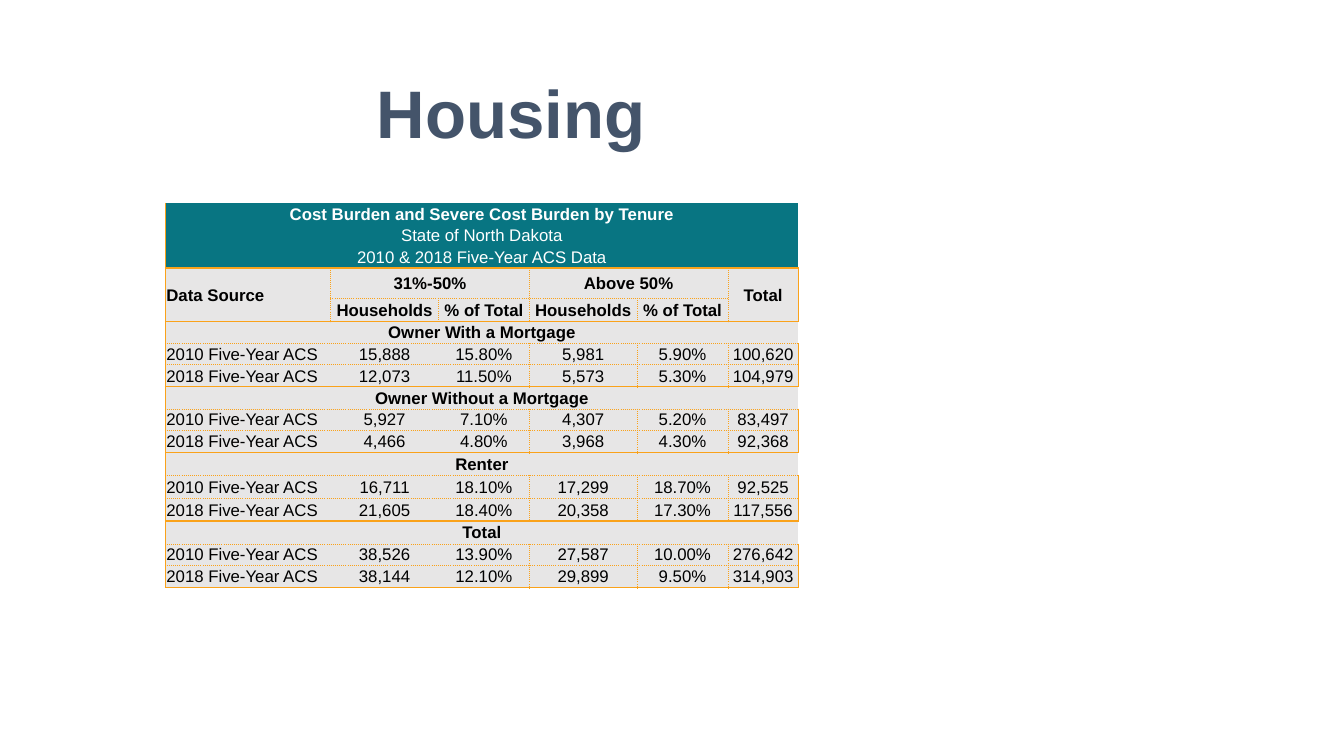
from lxml import etree
from pptx import Presentation, util as u
from pptx.dml.color import RGBColor
from pptx.enum import text
from pptx.oxml import ns

PX = 9144
TEAL, GREY, ORANGE = "087582", "E7E6E6", "FAA21A"
WHITE, BLACK, SLATE = "FFFFFF", "000000", "44546A"
NO_STYLE = "{2D5ABB26-0587-4C30-8999-92F81FD0307C}"
DOTTED, THIN, THICK = 0.5, 1, 2

COLUMN_WIDTHS = [164, 107, 90, 107, 90, 70]
ROW_HEIGHTS = [22, 21, 22, 30, 23, 22, 21, 22, 22, 21, 22, 23, 23, 22, 23, 21, 22]
CAPTIONS = [
    ["Cost Burden and Severe Cost Burden by Tenure"],
    ["State of North Dakota"],
    ["2010 & 2018 Five-Year ACS Data"],
]
HEADINGS = [
    ["Data Source", "31%-50%", "", "Above 50%", "", "Total"],
    ["", "Households", "% of Total", "Households", "% of Total", ""],
]
TENURES = {
    "Owner With a Mortgage": [
        ["15,888", "15.80%", "5,981", "5.90%", "100,620"],
        ["12,073", "11.50%", "5,573", "5.30%", "104,979"],
    ],
    "Owner Without a Mortgage": [
        ["5,927", "7.10%", "4,307", "5.20%", "83,497"],
        ["4,466", "4.80%", "3,968", "4.30%", "92,368"],
    ],
    "Renter": [
        ["16,711", "18.10%", "17,299", "18.70%", "92,525"],
        ["21,605", "18.40%", "20,358", "17.30%", "117,556"],
    ],
    "Total": [
        ["38,526", "13.90%", "27,587", "10.00%", "276,642"],
        ["38,144", "12.10%", "29,899", "9.50%", "314,903"],
    ],
}
SECTION_ROWS = [5, 8, 11, 14]
HEADING_MERGES = [(3, 0, 4, 0), (3, 1, 3, 2), (3, 3, 3, 4), (3, 5, 4, 5)]


def color(value):
    """Return the colour for a hex string."""
    return RGBColor.from_string(value)


def set_font(paragraph, size, value, bold):
    """Set the font of a whole paragraph."""
    font = paragraph.font
    font.name, font.size, font.bold = "Arial", u.Pt(size), bold
    font.color.rgb = color(value)


def is_full_width(row):
    """Tell whether a row is one merged cell."""
    return row < len(CAPTIONS) or row in SECTION_ROWS


def vertical_rule(row, edge):
    """Return the line width at a column edge of a row."""
    if edge in (0, len(COLUMN_WIDTHS)):
        return THIN
    if is_full_width(row):
        return None
    return DOTTED if edge in (3, 5) or (edge == 1 and row in (3, 4)) else None


def horizontal_rule(edge, column):
    """Return the line width at a row edge of a column."""
    if edge == SECTION_ROWS[-1]:
        return THICK
    if edge in (len(CAPTIONS), len(ROW_HEIGHTS), *SECTION_ROWS):
        return THIN
    below_section = edge - 1 in SECTION_ROWS
    return DOTTED if below_section or (edge == 4 and 1 <= column <= 4) else None


def add_borders(cell, row, column):
    """Draw the four borders of a cell."""
    widths = {
        "a:lnL": vertical_rule(row, column),
        "a:lnR": vertical_rule(row, column + 1),
        "a:lnT": horizontal_rule(row, column),
        "a:lnB": horizontal_rule(row + 1, column),
    }
    properties = cell._tc.get_or_add_tcPr()
    for tag, width in widths.items():
        if width is None:
            continue
        line = etree.SubElement(properties, ns.qn(tag), w=str(int(u.Pt(width))))
        fill = etree.SubElement(line, ns.qn("a:solidFill"))
        etree.SubElement(fill, ns.qn("a:srgbClr"), val=ORANGE)
        dash = "sysDot" if width == DOTTED else "solid"
        etree.SubElement(line, ns.qn("a:prstDash"), val=dash)


def format_cell(cell, row, column, words):
    """Fill one cell with its words, borders and colours."""
    add_borders(cell, row, column)
    caption = row < len(CAPTIONS)
    cell.fill.solid()
    cell.fill.fore_color.rgb = color(TEAL if caption else GREY)
    cell.margin_left = cell.margin_right = cell.margin_top = PX
    cell.margin_bottom = 0
    cell.vertical_anchor = text.MSO_ANCHOR.MIDDLE
    cell.text = words
    paragraph = cell.text_frame.paragraphs[0]
    left = column == 0 and not is_full_width(row)
    paragraph.alignment = text.PP_ALIGN.LEFT if left else text.PP_ALIGN.CENTER
    bold = row in (0, 3, 4) or row in SECTION_ROWS
    set_font(paragraph, 12, WHITE if caption else BLACK, bold)


def place_title(slide, left, top, width, height):
    """Place the slide title near the top of its box."""
    title = slide.shapes.title
    title.left, title.top = left * PX, top * PX
    title.width, title.height = width * PX, height * PX
    frame = title.text_frame
    frame.text = "Housing"
    frame.word_wrap = True
    frame.auto_size = text.MSO_AUTO_SIZE.NONE
    frame.vertical_anchor = text.MSO_ANCHOR.TOP
    frame.margin_left, frame.margin_right = 41 * PX, 10 * PX
    frame.margin_top = 38 * PX
    heading = frame.paragraphs[0]
    heading.alignment = text.PP_ALIGN.CENTER
    heading.line_spacing = 1.0
    heading.space_before = u.Pt(0)
    set_font(heading, 48, SLATE, True)


def place_cost_burden(slide, left, top):
    """Place the cost burden table at the given corner."""
    rows = CAPTIONS + HEADINGS
    for tenure, figures in TENURES.items():
        years = [[f"{year} Five-Year ACS", *values]
                 for year, values in zip((2010, 2018), figures)]
        rows = rows + [[tenure]] + years
    columns = len(COLUMN_WIDTHS)
    burden = slide.shapes.add_table(
        len(rows), columns, left * PX, top * PX,
        sum(COLUMN_WIDTHS) * PX, sum(ROW_HEIGHTS) * PX).table
    burden.first_row = burden.horz_banding = False
    burden._tbl.tblPr.find(ns.qn("a:tableStyleId")).text = NO_STYLE
    for column, width in zip(burden.columns, COLUMN_WIDTHS):
        column.width = width * PX
    for row, height in zip(burden.rows, ROW_HEIGHTS):
        row.height = height * PX
    for row, entries in enumerate(rows):
        padded = entries + [""] * (columns - len(entries))
        for column, words in enumerate(padded):
            format_cell(burden.cell(row, column), row, column, words)
    full_rows = [(row, 0, row, columns - 1)
                 for row in range(len(rows)) if is_full_width(row)]
    for first_row, first, last_row, last in full_rows + HEADING_MERGES:
        burden.cell(first_row, first).merge(burden.cell(last_row, last))


def main():
    """Build the housing slide and save it."""
    deck = Presentation()
    deck.slide_width, deck.slide_height = 1333 * PX, 750 * PX
    slide = deck.slides.add_slide(deck.slide_layouts.get_by_name("Title Only"))
    place_title(slide, 28, 33, 927, 695)
    place_cost_burden(slide, 164, 201)
    deck.save("out.pptx")


if __name__ == "__main__":
    main()
